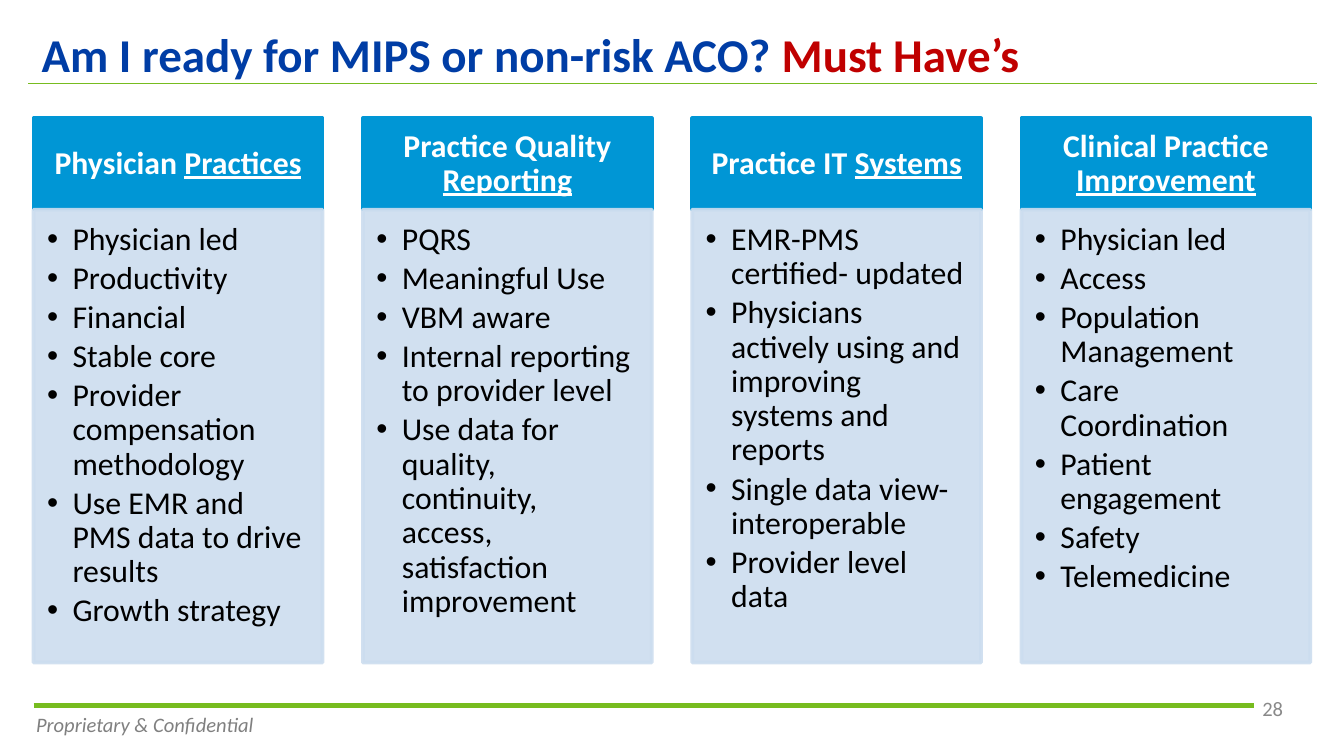
from lxml import etree
from pptx import Presentation
from pptx import util as u
from pptx.dml.color import RGBColor
from pptx.enum import shapes, text
from pptx.oxml.ns import qn

COLORS = {
    "green": "77BC1F", "blue": "0096D5", "pale": "CCDDEF", "navy": "003DA5",
    "red": "C00000", "white": "FFFFFF", "black": "000000",
    "gray": "808080", "number": "898989",
}
COLUMNS = [
    ("Physician ", "Practices", [
        "Physician led", "Productivity", "Financial", "Stable core",
        "Provider compensation methodology",
        "Use EMR and PMS data to drive results", "Growth strategy"]),
    ("Practice Quality ", "Reporting", [
        "PQRS", "Meaningful Use", "VBM aware",
        "Internal reporting to provider level",
        "Use data for quality, continuity, access, satisfaction improvement"]),
    ("Practice IT ", "Systems", [
        "EMR-PMS certified- updated",
        "Physicians actively using and improving systems and reports",
        "Single data view- interoperable", "Provider level data"]),
    ("Clinical Practice ", "Improvement", [
        "Physician led", "Access", "Population Management",
        "Care Coordination", "Patient engagement", "Safety", "Telemedicine"]),
]


def add_run(p, content, size=17, color="black", bold=False, italic=False, underline=False):
    r = p.add_run()
    r.text = content
    r.font.name = "Calibri"
    r.font.size = u.Pt(size)
    r.font.color.rgb = RGBColor.from_string(COLORS[color])
    r.font.bold, r.font.italic, r.font.underline = bold, italic, underline


def set_frame(sp, box, anchor, insets=(0.1, 0.05, 0.1, 0.05)):
    sp.left, sp.top, sp.width, sp.height = [u.Inches(v) for v in box]
    tf = sp.text_frame
    tf.word_wrap = True
    tf.auto_size = text.MSO_AUTO_SIZE.NONE
    tf.vertical_anchor = anchor
    tf.margin_left, tf.margin_top, tf.margin_right, tf.margin_bottom = [
        u.Inches(v) for v in insets]
    return tf


prs = Presentation()
prs.slide_width, prs.slide_height = u.Inches(10), u.Inches(10) * 9 // 16
s = prs.slides.add_slide(prs.slide_layouts[4])
TOP, MIDDLE, BOTTOM = text.MSO_ANCHOR.TOP, text.MSO_ANCHOR.MIDDLE, text.MSO_ANCHOR.BOTTOM

p = set_frame(s.shapes.title, (0.21, 0.12, 9.58, 0.56), MIDDLE).paragraphs[0]
p.alignment = text.PP_ALIGN.LEFT
add_run(p, "Am I ready for MIPS or non-risk ACO? ", size=25.2, color="navy", bold=True)
add_run(p, "Must Have’s", size=25.2, color="red", bold=True)

for x1, x2, y, weight in [(0.25, 9.33, 5.25, 2.25), (0.21, 9.8, 0.62, 0.75)]:
    line = s.shapes.add_connector(
        shapes.MSO_CONNECTOR.STRAIGHT, u.Inches(x1), u.Inches(y), u.Inches(x2), u.Inches(y))
    line.element.remove(line.element.find(qn("p:style")))
    line.line.color.rgb = RGBColor.from_string(COLORS["green"])
    line.line.width = u.Pt(weight)
    etree.SubElement(line.element.spPr, qn("a:effectLst"))

for i, (start, end, items) in enumerate(COLUMNS):
    x = 0.25 + 2.45 * i
    head = s.shapes.add_shape(shapes.MSO_SHAPE.RECTANGLE, 0, 0, 0, 0)
    head.shadow.inherit = False
    p = set_frame(head, (x, 0.88, 2.15, 0.68), MIDDLE, (0.13, 0.08, 0.13, 0.08)).paragraphs[0]
    p.alignment = text.PP_ALIGN.CENTER
    p.line_spacing = 0.9
    add_run(p, start, color="white", bold=True)
    add_run(p, end, color="white", bold=True, underline=True)

    body = s.placeholders[i + 1]
    s.shapes.element.append(body.element)
    tf = set_frame(body, (x, 1.56, 2.15, 3.37), TOP, (0.1, 0.1, 0.13, 0.15))
    for j, item in enumerate(items):
        p = tf.add_paragraph() if j else tf.paragraphs[0]
        pPr = p._p.get_or_add_pPr()
        pPr.set("marL", str(u.Inches(0.19)))
        pPr.set("indent", str(u.Inches(-0.19)))
        etree.SubElement(pPr, qn("a:buFont"), typeface="Arial")
        etree.SubElement(pPr, qn("a:buChar"), char="•")
        p.alignment = text.PP_ALIGN.LEFT
        p.line_spacing = 0.9
        p.space_before, p.space_after = u.Pt(0), u.Pt(2.55)
        add_run(p, item)

    for sp, color in [(head, "blue"), (body, "pale")]:
        sp.fill.solid()
        sp.fill.fore_color.rgb = RGBColor.from_string(COLORS[color])
        sp.line.color.rgb = RGBColor.from_string(COLORS[color])
        sp.line.width = u.Pt(2)
    for clr in body.element.spPr.iter(qn("a:srgbClr")):
        etree.SubElement(clr, qn("a:alpha"), val="90000")

for content, box, anchor, align, color, italic in [
    ("28", (9.26, 5.21, 0.42, 0.2), BOTTOM, text.PP_ALIGN.CENTER, "number", False),
    ("Proprietary & Confidential", (0.17, 5.25, 2.33, 0.29), TOP, text.PP_ALIGN.LEFT, "gray", True),
]:
    p = set_frame(s.shapes.add_textbox(0, 0, 0, 0), box, anchor).paragraphs[0]
    p.alignment = align
    add_run(p, content, size=11, color=color, italic=italic)

prs.save("out.pptx")
